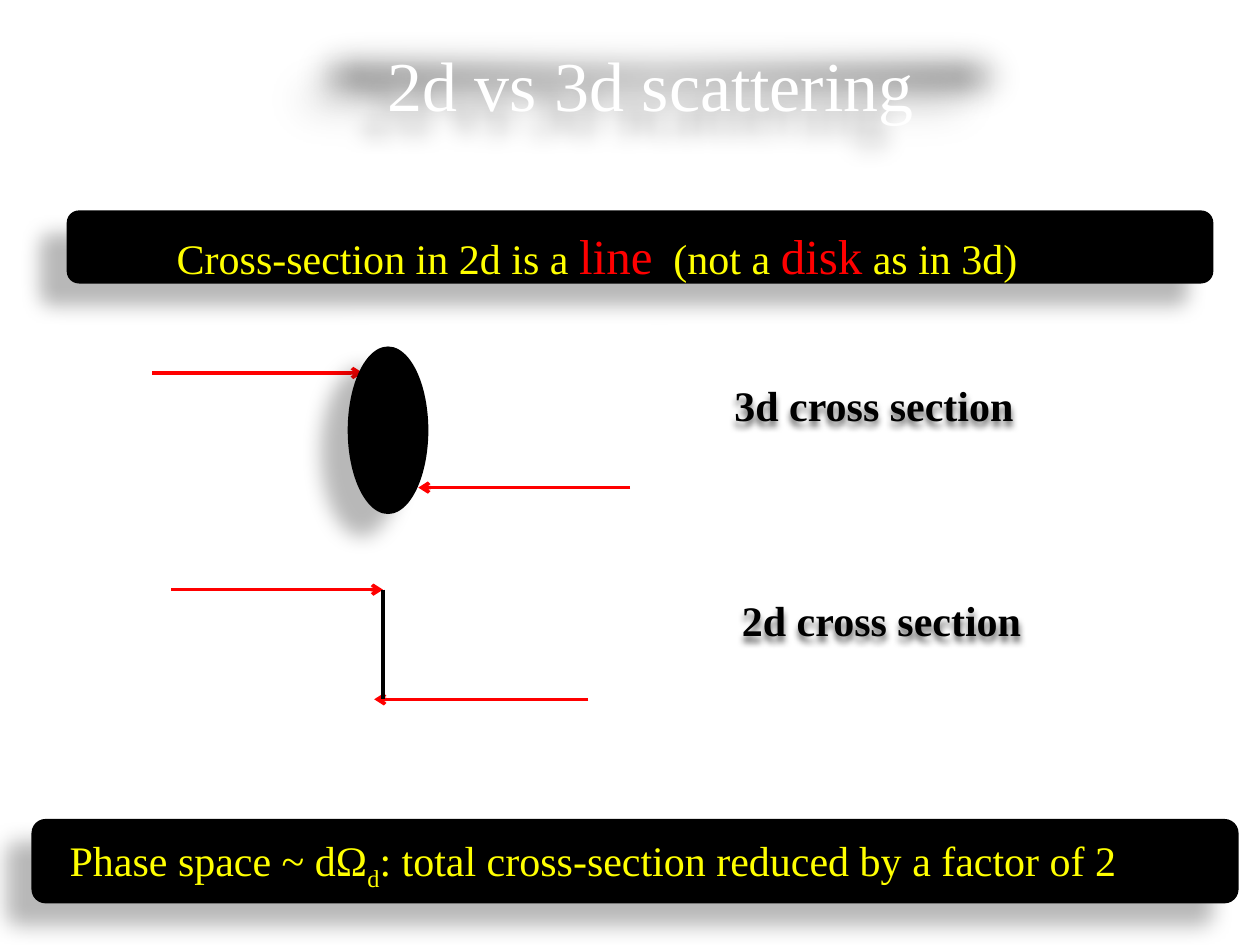
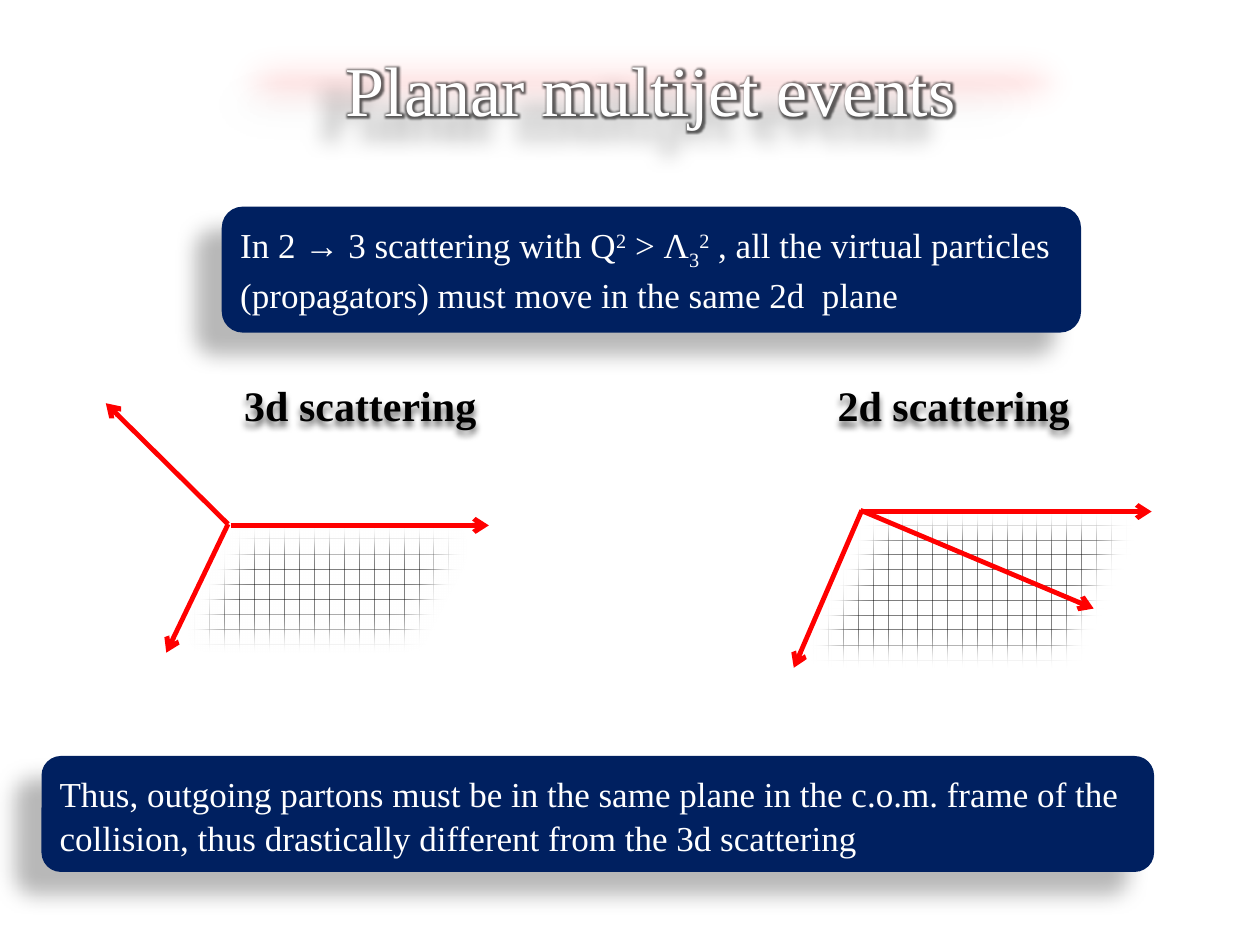
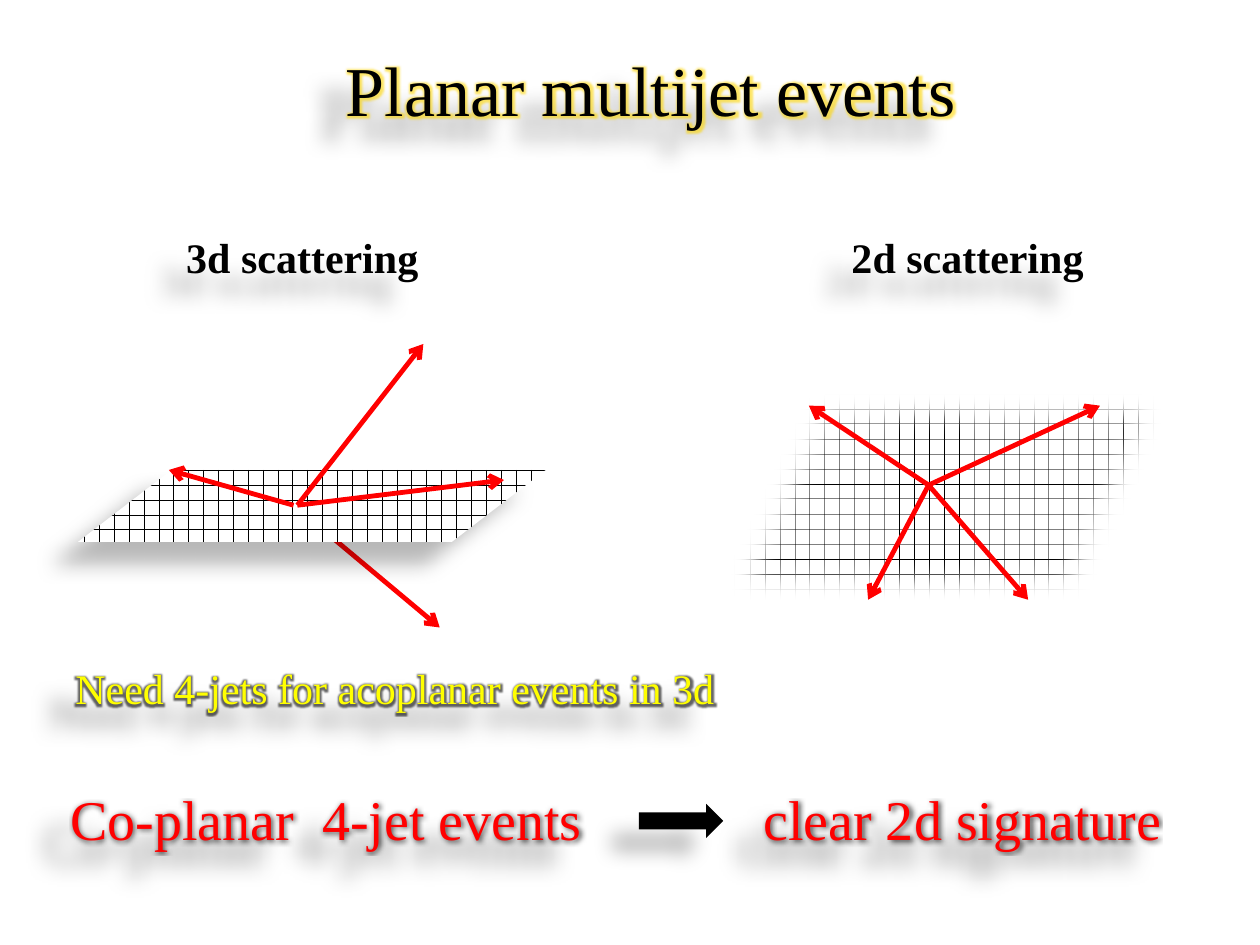
from dataclasses import dataclass
from typing import Optional, Union

from pptx import Presentation
from pptx.dml.color import RGBColor
from pptx.enum.dml import MSO_PATTERN
from pptx.enum.shapes import MSO_CONNECTOR, MSO_SHAPE
from pptx.enum.text import MSO_ANCHOR, PP_ALIGN
from pptx.oxml import parse_xml
from pptx.oxml.ns import nsdecls, qn
from pptx.util import Inches, Pt

COLS, ROWS = 100, 75
FONT = "Times New Roman"
BLACK, WHITE, RED, YELLOW, NAVY = "000000", "FFFFFF", "FF0000", "FFFF00", "002060"

prs = Presentation()
prs.slide_width, prs.slide_height = Inches(10), Inches(7.5)
COL, ROW = prs.slide_width / COLS, prs.slide_height / ROWS


@dataclass(frozen=True)
class Shadow:
    alpha: int
    blur: float
    dist: float
    angle: int


@dataclass(frozen=True)
class Run:
    text: str
    size: Optional[float] = None
    color: Optional[str] = None
    base: int = 0


@dataclass(frozen=True)
class Box:
    x: float
    y: float
    w: float
    h: float
    runs: tuple[Run, ...] = ()
    kind: Optional[MSO_SHAPE] = None
    fill: Optional[str] = None
    size: float = 24
    color: str = BLACK
    bold: bool = False
    align: PP_ALIGN = PP_ALIGN.LEFT
    anchor: MSO_ANCHOR = MSO_ANCHOR.TOP
    indent: float = 1
    top: float = 0.7
    tab: Optional[float] = None
    wrap: bool = True
    shadow: Optional[Shadow] = None
    soft: float = 0
    glow: Optional[str] = None


@dataclass(frozen=True)
class Line:
    x1: float
    y1: float
    x2: float
    y2: float
    color: str = RED
    width: float = 2.75
    arrow: bool = True


DEEP = Shadow(28, 11.8, 19.7, 141)
NEAR = Shadow(60, 4, 3, 90)


def rgb(color: str) -> RGBColor:
    return RGBColor.from_string(color)


def xml(tag: str, attrs: str = "", inner: str = ""):
    return parse_xml(f"<a:{tag} {nsdecls('a')} {attrs}>{inner}</a:{tag}>")


def tint(color: str, alpha: int) -> str:
    return f'<a:srgbClr val="{color}"><a:alpha val="{alpha * 1000}"/></a:srgbClr>'


def add_text(p, text: str, *, size: float, color: str, bold: bool = False,
             base: int = 0, glow: Optional[str] = None) -> None:
    r = p.add_run()
    r.text = text
    r.font.size, r.font.bold, r.font.name = Pt(size), bold, FONT
    r.font.color.rgb = rgb(color)
    rPr = r.font._element
    if base:
        rPr.set("baseline", str(base * 1000))
    if glow:
        halo = f'<a:glow rad="{Pt(5)}">{tint(glow, 60)}</a:glow>'
        rPr.find(qn("a:solidFill")).addnext(xml("effectLst", "", halo))


def paint(sp, fill: Optional[str]) -> None:
    if fill == "grid":
        sp.fill.patterned()
        sp.fill.pattern = MSO_PATTERN.HORIZONTAL_BRICK
        sp.fill.fore_color.rgb, sp.fill.back_color.rgb = rgb(BLACK), rgb(WHITE)
    elif fill == "radial":
        stops = "".join(f'<a:gs pos="{pos}"><a:srgbClr val="{c}"/></a:gs>'
                        for pos, c in ((0, "7F7F7F"), (100000, BLACK)))
        centre = '<a:path path="circle"><a:fillToRect l="50000" t="50000" r="50000" b="50000"/></a:path>'
        sp._element.spPr.insert(2, xml("gradFill", "", f"<a:gsLst>{stops}</a:gsLst>{centre}"))
    elif fill:
        sp.fill.solid()
        sp.fill.fore_color.rgb = rgb(fill)


def add_effects(sp, shadow: Optional[Shadow], soft: float) -> None:
    sp.shadow.inherit = False
    effects = sp._element.spPr.find(qn("a:effectLst"))
    if shadow:
        effects.append(xml("outerShdw", f'blurRad="{Pt(shadow.blur)}" dist="{Pt(shadow.dist)}" '
                           f'dir="{shadow.angle * 60000}" algn="ctr" rotWithShape="0"',
                           tint(BLACK, shadow.alpha)))
    if soft:
        effects.append(xml("softEdge", f'rad="{Pt(soft)}"'))


def draw_box(s, box: Box) -> None:
    frame = (round(box.x * COL), round(box.y * ROW), round(box.w * COL), round(box.h * ROW))
    if box.kind is None:
        sp = s.shapes.add_textbox(*frame)
    else:
        sp = s.shapes.add_shape(box.kind, *frame)
        paint(sp, box.fill)
        if box.fill == "grid" and box.soft:
            sp.line.color.rgb, sp.line.width = rgb(BLACK), Pt(0.5)
        else:
            sp.line.fill.background()
    add_effects(sp, box.shadow, box.soft)
    if not box.runs:
        return
    tf = sp.text_frame
    tf.word_wrap, tf.vertical_anchor = box.wrap, box.anchor
    tf.margin_left, tf.margin_top = round(box.indent * COL), round(box.top * ROW)
    p = tf.paragraphs[0]
    p.alignment, p.line_spacing = box.align, 1.05
    if box.tab:
        stop = f'<a:tab pos="{round(box.tab * COL)}" algn="l"/>'
        p._p.get_or_add_pPr().append(xml("tabLst", "", stop))
    for run in box.runs:
        add_text(p, run.text, size=run.size or box.size, color=run.color or box.color,
                 bold=box.bold, base=run.base, glow=box.glow)


def draw_line(s, line: Line) -> None:
    c = s.shapes.add_connector(MSO_CONNECTOR.STRAIGHT, round(line.x1 * COL), round(line.y1 * ROW),
                               round(line.x2 * COL), round(line.y2 * ROW))
    c.line.color.rgb, c.line.width = rgb(line.color), Pt(line.width)
    if line.arrow:
        c.line._get_or_add_ln().append(xml("tailEnd", 'type="arrow"'))
    c._element.spPr.append(xml("effectLst"))


def band(x: float, y: float, w: float, h: float, *runs: Run, **style) -> Box:
    return Box(x, y, w, h, runs, MSO_SHAPE.ROUNDED_RECTANGLE, shadow=DEEP, **style)


def label(x: float, y: float, text: str, shadow: Shadow = NEAR) -> Box:
    return Box(x, y, 26, 9.1, (Run(text),), bold=True, wrap=False, shadow=shadow)


def jets_title(fill: str, color: str, glow: str, soft: float) -> Box:
    return Box(15.8, 2.5, 71.7, 8, (Run("Planar multijet events"),), MSO_SHAPE.RECTANGLE, fill,
               40, color, align=PP_ALIGN.CENTER, anchor=MSO_ANCHOR.MIDDLE, top=1.2,
               shadow=DEEP, soft=soft, glow=glow)


def plane(x: float, y: float, w: float, h: float, soft: float = 12.5, **style) -> Box:
    return Box(x, y, w, h, kind=MSO_SHAPE.FLOWCHART_DATA, fill="grid", soft=soft, **style)


def beam(x1: float, x2: float, y: float) -> Line:
    return Line(x1, y, x2, y, width=2)


Item = Union[Box, Line]

CROSS_SECTION: list[Item] = [
    Box(22, 1.5, 60.5, 9.2, (Run("2d vs 3d scattering"),), MSO_SHAPE.RECTANGLE, "radial", 40, WHITE,
        anchor=MSO_ANCHOR.MIDDLE, indent=8.75, top=1.2, shadow=DEEP, soft=25),
    band(5.3, 16.7, 91, 5.8, Run("Cross-section in 2d is a "), Run("line", 28, RED), Run("  (not a "),
         Run("disk", 28, RED), Run(" as in 3d)"), fill=BLACK, color=YELLOW, indent=8.45),
    label(57.3, 29.2, "3d cross section"),
    label(57.9, 46.3, "2d cross section"),
    beam(12.1, 28.8, 29.6),
    beam(50, 33.2, 38.7),
    Box(27.6, 27.5, 6.4, 13.3, kind=MSO_SHAPE.FLOWCHART_CONNECTOR, fill=BLACK, shadow=DEEP),
    beam(13.6, 30.4, 46.8),
    beam(46.7, 29.7, 55.5),
    Line(30.4, 46.8, 30.4, 55.5, BLACK, 2.25, False),
    band(2.5, 65, 95.8, 6.7, Run("Phase space ~ dΩ"), Run("d", base=-25),
         Run(": total cross-section reduced by a factor of 2"), fill=BLACK, color=YELLOW, indent=2.7),
]

THREE_JETS: list[Item] = [
    jets_title(RED, WHITE, BLACK, 25),
    band(17.6, 16.4, 68.2, 10, Run("In 2 → 3 scattering with Q"), Run("2", base=30), Run(" > Λ"),
         Run("3", base=-25), Run("2", base=30),
         Run(" , all the virtual particles (propagators) must move in the same 2d  plane"),
         fill=NAVY, color=WHITE, size=20),
    band(3.3, 60, 88.3, 9.2,
         Run("Thus, outgoing partons must be in the same plane in the c.o.m. frame of the collision, "
             "thus drastically different from the 3d scattering"), fill=NAVY, color=WHITE, size=20),
    plane(12.8, 41.6, 26.3, 10.2),
    Line(18.3, 41.7, 38.8, 41.7),
    Line(18.1, 41.6, 13.2, 51.8),
    Line(18.1, 41.6, 8.4, 32),
    plane(62.5, 40.5, 29.2, 12.5),
    Line(68.6, 40.6, 91.4, 40.6),
    Line(68.4, 40.5, 63, 53),
    Line(68.3, 40.5, 86.8, 48.3),
    label(18.4, 29.2, "3d scattering"),
    label(65.5, 29.2, "2d scattering"),
]

FOUR_JETS: list[Item] = [
    label(13.8, 17.5, "3d scattering", DEEP),
    label(66.6, 17.5, "2d scattering", DEEP),
    plane(56.3, 31.3, 37.5, 16.3),
    *(Line(73.7, 38.5, x, y) for x, y in ((87.3, 32.2), (68.9, 47.6), (81.6, 47.6), (64.2, 32.2))),
    Line(23.3, 40.1, 34.9, 49.8),
    plane(6.2, 37.3, 37.1, 5.7, soft=0, shadow=DEEP),
    Line(23.6, 40.1, 33.6, 27.3),
    Line(23.3, 40.1, 13.4, 37.3),
    Line(23.6, 40.1, 40, 38.1),
    Box(5, 51.7, 70.1, 9.1, (Run("Need 4-jets for acoplanar events in 3d"),), color=YELLOW,
        shadow=DEEP, glow=BLACK),
    jets_title(YELLOW, BLACK, "FFD700", 50),
    Box(4.6, 61.3, 92, 10.4, (Run("Co-planar  4-jet events\tclear 2d signature"),), size=32, color=RED,
        tab=55, shadow=DEEP, glow=BLACK),
    Box(50.7, 63.8, 6.7, 2.7, kind=MSO_SHAPE.RIGHT_ARROW, fill=BLACK, shadow=DEEP),
]


def main() -> None:
    for scene in (CROSS_SECTION, THREE_JETS, FOUR_JETS):
        s = prs.slides.add_slide(prs.slide_layouts[6])
        for item in scene:
            if isinstance(item, Box):
                draw_box(s, item)
            else:
                draw_line(s, item)
    prs.save("out.pptx")


if __name__ == "__main__":
    main()
